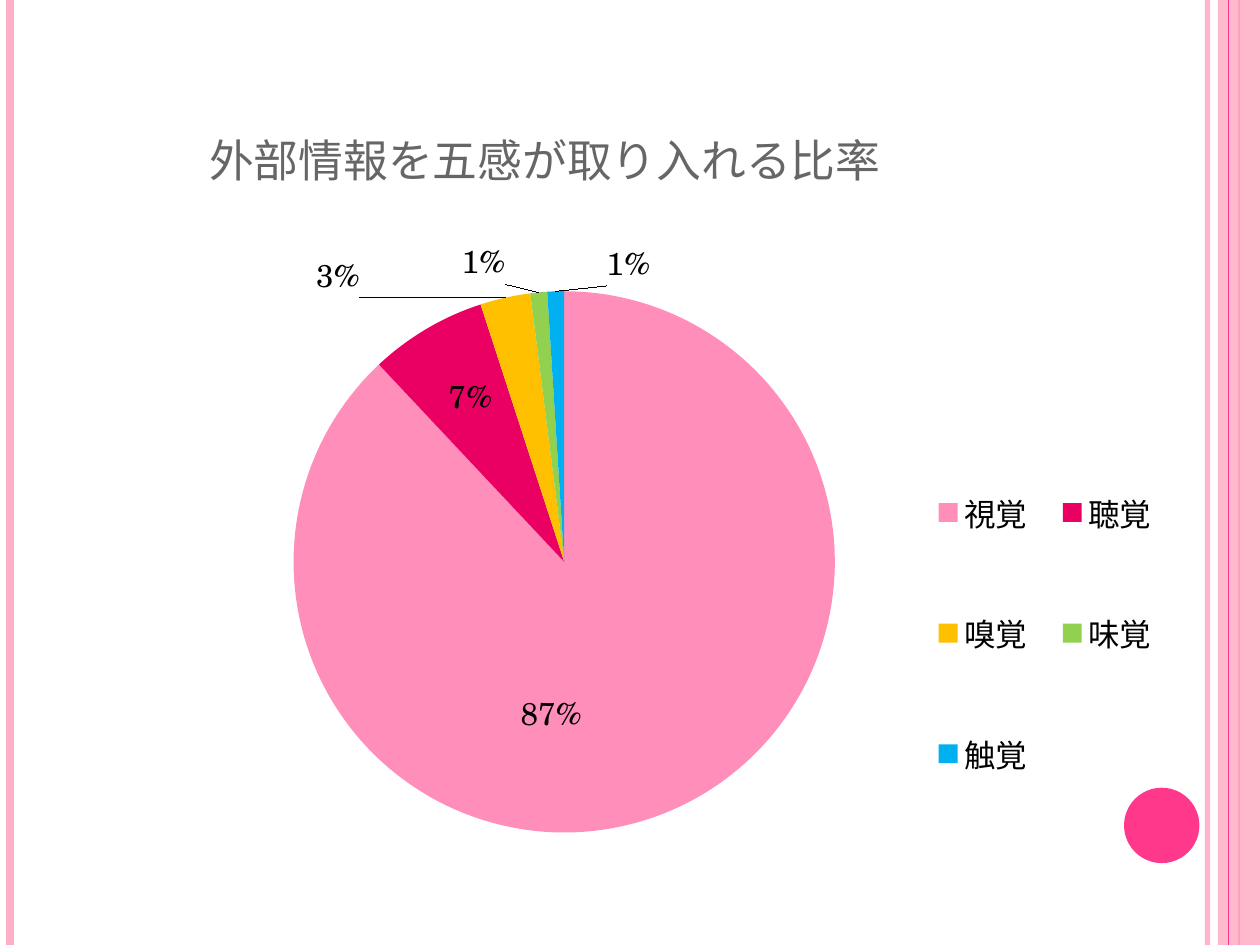
from lxml import etree
from pptx import Presentation
from pptx import util as u
from pptx.chart.data import CategoryChartData
from pptx.dml.color import RGBColor
from pptx.enum import chart as ch, shapes as sh, text as tx
from pptx.oxml import parse_xml
from pptx.oxml.ns import nsdecls, qn

Cm = u.Cm
FONT = "TeX Gyre Schola"
PALE = RGBColor(0xFF, 0xAF, 0xC5)
PINK = RGBColor(0xFF, 0x38, 0x8C)
GREY = RGBColor(0x66, 0x66, 0x66)
BLACK = RGBColor(0, 0, 0)
WIDE, HIGH = 25.4, 19.05

# Sense, share, slice colour, fixed label, label shift (x, y) in % of chart
SENSES = [
    ("視覚", 88, RGBColor(0xFF, 0x8E, 0xBA), "87%", (-13, -19.4)),
    ("聴覚", 7, RGBColor(0xE9, 0x00, 0x62), "7%", (6.2, 14.3)),
    ("嗅覚", 3, RGBColor(0xFF, 0xC0, 0x00), "3%", (-12.8, 1.1)),
    ("味覚", 1, RGBColor(0x92, 0xD0, 0x50), None, (-2.9, -0.1)),
    ("触覚", 1, RGBColor(0x00, 0xB0, 0xF0), None, (6.5, 0.3)),
]


def fade(fill, pct):
    tint = fill._xPr.find(".//" + qn("a:srgbClr"))
    etree.SubElement(tint, qn("a:alpha")).set("val", str(pct * 1000))


def rule(slide, x, top, high, color, width, alpha=None):
    line = slide.shapes.add_connector(
        sh.MSO_CONNECTOR.STRAIGHT, Cm(x), Cm(top), Cm(x), Cm(top + high))
    line.line.color.rgb = color
    line.line.width = u.Pt(width)
    if alpha:
        fade(line.line.fill, alpha)
    etree.SubElement(line._element.spPr, qn("a:effectLst"))


def block(slide, kind, box, color):
    shape = slide.shapes.add_shape(kind, *map(Cm, box))
    shape.shadow.inherit = False
    shape.fill.solid()
    shape.fill.fore_color.rgb = color
    shape.line.fill.background()
    return shape


def frame(slide, box):
    """Side stripes and the round badge."""
    left, top, wide, high = box
    right = left + wide
    rule(slide, right - 1.06, top, high, PALE, 3, 93)
    rule(slide, left + 0.21, top, high, PALE, 4.5)
    rule(slide, right - 0.42, top, high, PINK, 1.5)
    band = block(slide, sh.MSO_SHAPE.RECTANGLE,
                 (right - 0.85, top, 0.85, high), PALE)
    fade(band.fill, 87)
    rule(slide, right - 0.64, top, high, PINK, 0.75)
    block(slide, sh.MSO_SHAPE.OVAL,
          (right - 2.74, top + 15.88, 1.52, 1.52), PINK)


def title(slide, box):
    frm = slide.shapes.add_textbox(*map(Cm, box)).text_frame
    frm.word_wrap = True
    frm.vertical_anchor = tx.MSO_ANCHOR.BOTTOM
    frm.margin_left = Cm(2.95)
    frm.text = "外部情報を五感が取り入れる比率"
    font = frm.paragraphs[0].runs[0].font
    style(font, 32, GREY)
    font._element.set("cap", "small")


def style(font, size, color):
    font.name = FONT
    font.size = u.Pt(size)
    font.color.rgb = color


def layout(inner=False, **vals):
    """Manual layout in % of the chart; a label has only a shift."""
    modes = '<c:layoutTarget val="inner"/>' if inner else ""
    if "w" in vals:
        modes += '<c:xMode val="edge"/><c:yMode val="edge"/>'
    nums = "".join(f'<c:{k} val="{v / 100:.3f}"/>' for k, v in vals.items())
    return parse_xml(f"<c:layout {nsdecls('c')}><c:manualLayout>"
                     f"{modes}{nums}</c:manualLayout></c:layout>")


def place(node, new, after=None):
    for old in node.findall(qn("c:layout")):
        node.remove(old)
    if after is None:
        node.insert(0, new)
    else:
        node.find(qn(after)).addnext(new)


def percent(node):
    node.find(qn("c:showVal")).set("val", "0")
    node.find(qn("c:showPercent")).set("val", "1")


def pie(slide, box):
    data = CategoryChartData()
    data.categories = [row[0] for row in SENSES]
    data.add_series("Series 1", [row[1] for row in SENSES])
    chart = slide.shapes.add_chart(
        ch.XL_CHART_TYPE.PIE, *map(Cm, box), data).chart
    style(chart.font, 18, BLACK)
    chart.has_title = False
    plot = chart.plots[0]
    plot.vary_by_categories = True
    area = chart._chartSpace.chart.plotArea
    place(area, layout(inner=True, x=20.5, y=10.5, w=48.3, h=80.6))

    # Legend in two columns
    chart.has_legend = True
    key = chart.legend
    key.position = ch.XL_LEGEND_POSITION.RIGHT
    key.include_in_layout = False
    style(key.font, 18, BLACK)
    place(key._element, layout(x=75.8, y=28.9, w=23.4, h=65), "c:legendPos")

    # Slices and their labels
    series = plot.series[0]
    tags = series.data_labels
    tags.number_format = "0%"
    tags.number_format_is_linked = False
    tags.show_value = False
    tags.show_percentage = True
    tags.position = ch.XL_LABEL_POSITION.OUTSIDE_END
    style(tags.font, 18, BLACK)
    lead = tags._element.find(qn("c:showLeaderLines"))
    if lead is None:
        lead = etree.SubElement(tags._element, qn("c:showLeaderLines"))
    lead.set("val", "1")
    for i, (_, _, color, words, (dx, dy)) in enumerate(SENSES):
        point = series.points[i]
        point.format.fill.solid()
        point.format.fill.fore_color.rgb = color
        tag = point.data_label
        tag.position = ch.XL_LABEL_POSITION.OUTSIDE_END
        if words:
            tag.text_frame.text = words
            style(tag.text_frame.paragraphs[0].runs[0].font, 18, BLACK)
        else:
            style(tag.font, 18, BLACK)
        node = tags._element.findall(qn("c:dLbl"))[i]
        percent(node)
        place(node, layout(x=dx, y=dy), "c:idx")


def main():
    prs = Presentation()
    prs.slide_width, prs.slide_height = Cm(WIDE), Cm(HIGH)
    slide = prs.slides.add_slide(prs.slide_layouts[6])
    frame(slide, (0, 0, WIDE, HIGH))
    title(slide, (1.27, 0.76, 20.75, 3.18))
    pie(slide, (1.27, 4.45, 22.63, 13.54))
    prs.save("out.pptx")


if __name__ == "__main__":
    main()
